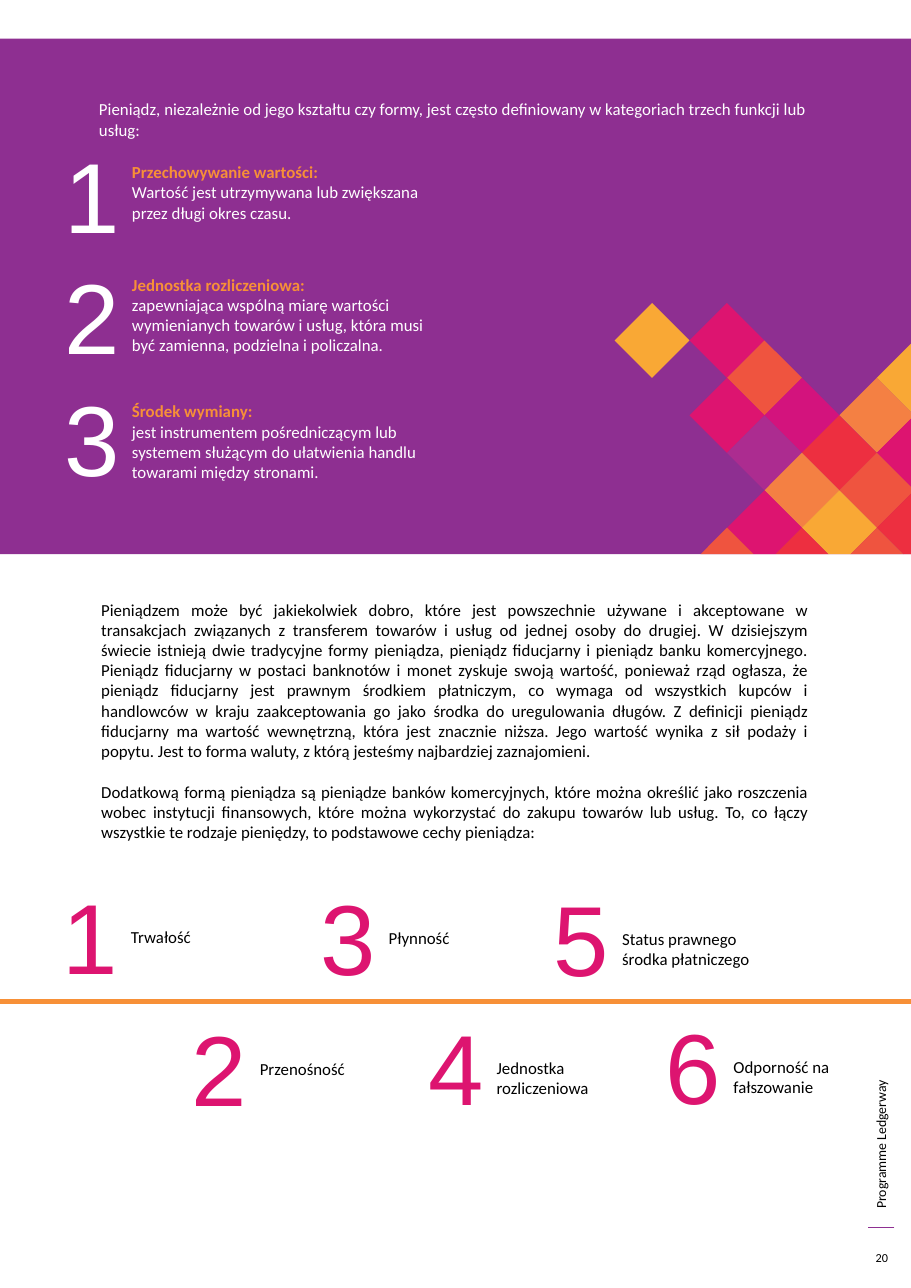
from pptx import Presentation
from pptx.dml.color import RGBColor as Rgb
from pptx.enum.shapes import MSO_CONNECTOR as Conn, MSO_SHAPE as Kind
from pptx.enum.text import MSO_ANCHOR as Anchor, PP_ALIGN as Align
from pptx.oxml.ns import qn
from pptx.util import Inches, Pt
from lxml.etree import SubElement

WIDTH, HEIGHT = 8.27, 11.69
BAND_TOP, BAND_END = 0.35, 5.03

SIDE, PAGE = "Programme Ledgerway", "20"
INTRO = ("Pieniądz, niezależnie od jego kształtu czy formy, jest często definiowany "
         "w kategoriach trzech funkcji lub usług:")
# text top, heading, description
ROLES = [
    (1.42, "Przechowywanie wartości:",
     "Wartość jest utrzymywana lub zwiększana przez długi okres czasu."),
    (2.44, "Jednostka rozliczeniowa:",
     "zapewniająca wspólną miarę wartości wymienianych towarów i usług, która musi "
     "być zamienna, podzielna i policzalna."),
    (3.59, "Środek wymiany:",
     "jest instrumentem pośredniczącym lub systemem służącym do ułatwienia handlu "
     "towarami między stronami."),
]
BODY = [
    "Pieniądzem może być jakiekolwiek dobro, które jest powszechnie używane i "
    "akceptowane w transakcjach związanych z transferem towarów i usług od jednej "
    "osoby do drugiej. W dzisiejszym świecie istnieją dwie tradycyjne formy pieniądza, "
    "pieniądz fiducjarny i pieniądz banku komercyjnego. Pieniądz fiducjarny w postaci "
    "banknotów i monet zyskuje swoją wartość, ponieważ rząd ogłasza, że pieniądz "
    "fiducjarny jest prawnym środkiem płatniczym, co wymaga od wszystkich kupców i "
    "handlowców w kraju zaakceptowania go jako środka do uregulowania długów. Z "
    "definicji pieniądz fiducjarny ma wartość wewnętrzną, która jest znacznie niższa. "
    "Jego wartość wynika z sił podaży i popytu. Jest to forma waluty, z którą jesteśmy "
    "najbardziej zaznajomieni.",
    "Dodatkową formą pieniądza są pieniądze banków komercyjnych, które można określić "
    "jako roszczenia wobec instytucji finansowych, które można wykorzystać do zakupu "
    "towarów lub usług. To, co łączy wszystkie te rodzaje pieniędzy, to podstawowe "
    "cechy pieniądza:",
]
# digit left, digit top, label width, label
TRAITS = [
    (0.47, 7.89, 1.15, "Trwałość"),
    (1.64, 9.09, 1.15, "Przenośność"),
    (2.81, 7.9, 1.15, "Płynność"),
    (3.79, 9.08, 1.43, "Jednostka rozliczeniowa"),
    (4.93, 7.91, 1.64, "Status prawnego środka płatniczego"),
    (5.94, 9.07, 1.15, "Odporność na fałszowanie"),
]
# lattice column, lattice row, colour
TILES = [
    (0, 0, "gold"), (2, 0, "pink"), (3, 1, "coral"), (7, 1, "gold"),
    (2, 2, "pink"), (4, 2, "magenta"), (6, 2, "peach"),
    (3, 3, "plum"), (5, 3, "red"), (7, 3, "pink"),
    (4, 4, "peach"), (6, 4, "coral"),
    (3, 5, "pink"), (5, 5, "gold"), (7, 5, "red"),
    (2, 6, "coral"), (4, 6, "red"), (6, 6, "coral"),
]
TILE_X, TILE_Y, STEP = 5.92, 3.09, 0.34

THEME = {
    "colors": {
        "purple": "8E2F91", "orange": "F79037", "white": "FFFFFF", "black": "000000",
        "pink": "DD1470", "gold": "F9A835", "coral": "EF543F", "red": "ED2F40",
        "peach": "F48043", "plum": "AC2C90", "magenta": "D3137D",
    },
    "fonts": {
        "text": {"name": "Calibri", "size": Pt(11), "bold": False},
        "head": {"name": "Calibri", "size": Pt(11), "bold": True},
        "digit": {"name": "Arial", "size": Pt(65), "bold": False},
        "side": {"name": "Calibri", "size": Pt(9), "bold": False},
        "page": {"name": "Calibri", "size": Pt(8), "bold": False},
    },
}


def color(name):
    return Rgb.from_string(THEME["colors"][name])


def write(slide, box, paras, align=Align.LEFT, gap=0):
    """Add a text box; paras holds (text, font, colour), gap is in points."""
    shape = slide.shapes.add_textbox(*map(Inches, box))
    frame = shape.text_frame
    frame.word_wrap = True
    for i, (text, font, ink) in enumerate(paras):
        para = frame.paragraphs[0] if i == 0 else frame.add_paragraph()
        para.alignment = align
        para.space_before = Pt(gap if i else 0)
        run = para.add_run()
        run.text = text
        for key, value in THEME["fonts"][font].items():
            setattr(run.font, key, value)
        run.font.color.rgb = color(ink)
    return shape


def paint(shape, ink):
    shape.shadow.inherit = False
    shape.fill.solid()
    shape.fill.fore_color.rgb = color(ink)
    shape.line.fill.background()


def rule(slide, ends, ink, weight):
    line = slide.shapes.add_connector(Conn.STRAIGHT, *map(Inches, ends))
    line.line.color.rgb = color(ink)
    line.line.width = Pt(weight)
    SubElement(line._element.spPr, qn("a:effectLst"))


def clip(points, axis, limit):
    """Cut off the part of a polygon beyond limit on one axis."""
    kept = []
    for a, b in zip(points, points[1:] + points[:1]):
        if a[axis] <= limit:
            kept.append(a)
        if (a[axis] <= limit) != (b[axis] <= limit):
            t = (limit - a[axis]) / (b[axis] - a[axis])
            kept.append(tuple(p + t * (q - p) for p, q in zip(a, b)))
    return kept


def tile(slide, col, row, ink):
    x, y = TILE_X + col * STEP, TILE_Y + row * STEP
    points = [(x, y - STEP), (x + STEP, y), (x, y + STEP), (x - STEP, y)]
    points = clip(clip(points, 0, WIDTH), 1, BAND_END)
    start, *rest = [tuple(map(Inches, p)) for p in points]
    form = slide.shapes.build_freeform(*start)
    form.add_line_segments(rest, close=True)
    paint(form.convert_to_shape(), ink)


def digit(slide, x, y, num, ink):
    write(slide, (x, y, 0.72, 1.19), [(str(num), "digit", ink)])


def main():
    deck = Presentation()
    deck.slide_width, deck.slide_height = Inches(WIDTH), Inches(HEIGHT)
    slide = deck.slides.add_slide(deck.slide_layouts[6])

    side = write(slide, (6.26, 9.21, 3.47, 0.25), [(SIDE, "side", "black")])
    side.rotation = 270
    rule(slide, (8.12, 11.14, 7.88, 11.14), "purple", 0.75)
    page = write(slide, (7.8, 11.16, 0.41, 0.51), [(PAGE, "page", "black")], Align.CENTER)
    page.text_frame.vertical_anchor = Anchor.MIDDLE

    band = slide.shapes.add_shape(
        Kind.RECTANGLE, *map(Inches, (0, BAND_TOP, WIDTH, BAND_END - BAND_TOP)))
    paint(band, "purple")
    for col, row, ink in TILES:
        tile(slide, col, row, ink)

    write(slide, (0.8, 0.85, 6.62, 0.31), [(INTRO, "text", "white")], Align.JUSTIFY)
    for i, (top, head, text) in enumerate(ROLES):
        digit(slide, 0.49, 1.17 + 1.1 * i, i + 1, "white")
        write(slide, (1.1, top, 3, 0.69),
              [(head, "head", "orange"), (text, "text", "white")])

    write(slide, (0.82, 5.39, 6.62, 2.27),
          [(text, "text", "black") for text in BODY], Align.JUSTIFY, gap=13.4)

    rule(slide, (0, 9.09, WIDTH, 9.09), "orange", 3)
    for num, (x, y, wide, label) in enumerate(TRAITS, 1):
        digit(slide, x, y, num, "pink")
        write(slide, (x + 0.62, y + 0.47, wide, 0.29), [(label, "text", "black")])

    deck.save("out.pptx")


if __name__ == "__main__":
    main()
